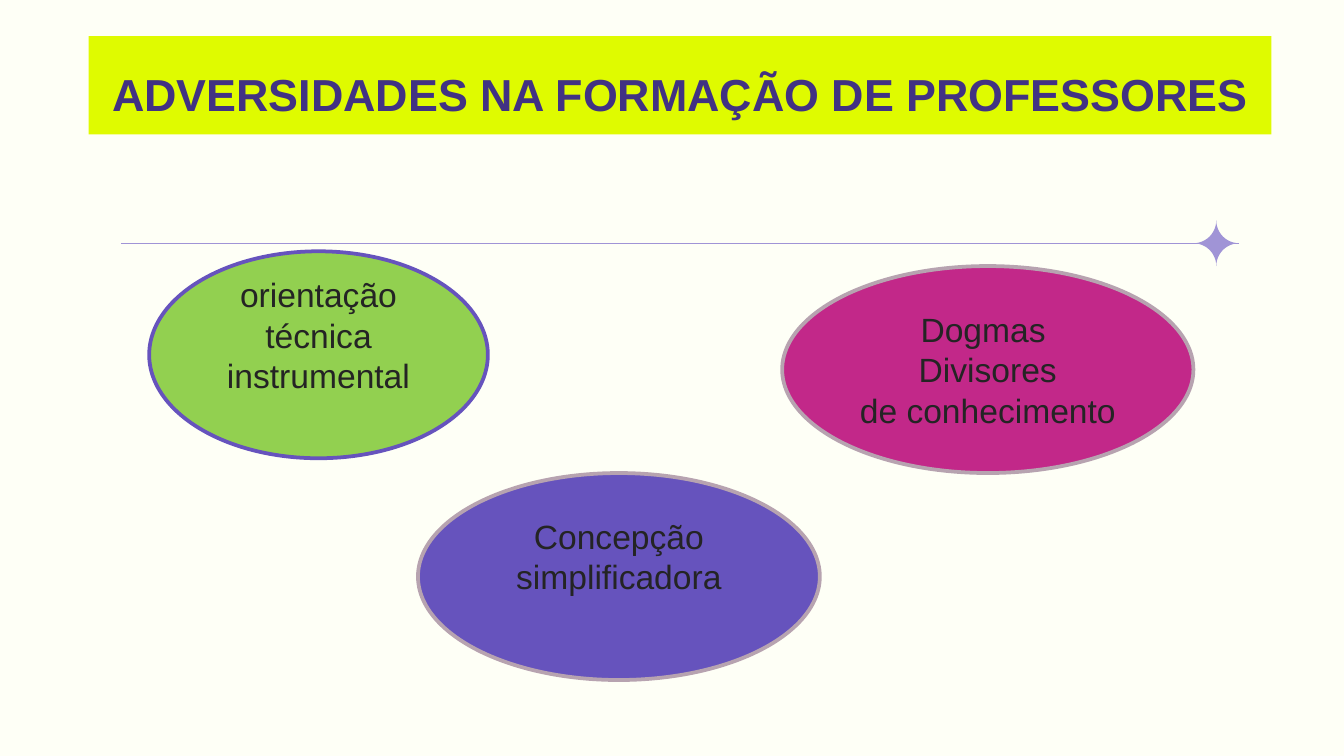
from dataclasses import dataclass

from lxml import etree
from pptx import Presentation
from pptx.dml.color import RGBColor
from pptx.enum import shapes, text
from pptx.oxml.ns import qn
from pptx.util import Inches, Pt

COLORS = {
    "background": "FEFFF6",
    "banner": "DFFB00",
    "title": "413283",
    "lilac": "A094D6",
    "green": "92D050",
    "purple": "6653BD",
    "magenta": "C22889",
    "mauve": "B7A3B0",
    "ink": "242424",
}
FONT = "Arial"
OVAL_HEIGHT = 1.54
RULE_Y = 1.81
RULE_LEFT, RULE_RIGHT = 0.9, 9.22
STAR_SIZE = 0.34


@dataclass
class Oval:
    """An adversity shown in an ellipse."""

    left: float
    top: float
    width: float
    fill: str
    outline: str
    lines: tuple[str, ...]
    bottom_inset: float = 0.05


OVALS = (
    Oval(1.11, 1.87, 2.52, "green", "purple", ("orientação técnica instrumental",), 0.35),
    Oval(3.11, 3.52, 2.99, "purple", "mauve", ("Concepção simplificadora",), 0.35),
    Oval(5.82, 1.98, 3.06, "magenta", "mauve", ("Dogmas ", "Divisores", "de conhecimento")),
)


def color(name: str) -> RGBColor:
    """Return the named palette colour."""
    return RGBColor.from_string(COLORS[name])


def add_filled(slide, kind, left: float, top: float, width: float, height: float, fill: str):
    """Add a flat preset shape without outline or shadow."""
    shape = slide.shapes.add_shape(kind, Inches(left), Inches(top), Inches(width), Inches(height))
    shape.shadow.inherit = False
    shape.fill.solid()
    shape.fill.fore_color.rgb = color(fill)
    shape.line.fill.background()
    return shape


def write(shape, lines: tuple[str, ...], size: int, ink: str, bold: bool = False) -> None:
    """Write centred paragraphs into a shape."""
    frame = shape.text_frame
    frame.word_wrap = True
    frame.vertical_anchor = text.MSO_ANCHOR.MIDDLE
    frame.text = "\n".join(lines)
    for paragraph in frame.paragraphs:
        paragraph.alignment = text.PP_ALIGN.CENTER
        for run in paragraph.runs:
            run.font.name = FONT
            run.font.size = Pt(size)
            run.font.bold = bold
            run.font.color.rgb = color(ink)


def add_banner(slide) -> None:
    """Add the title banner."""
    banner = add_filled(slide, shapes.MSO_SHAPE.RECTANGLE, 0.66, 0.27, 8.8, 0.73, "banner")
    write(banner, ("ADVERSIDADES NA FORMAÇÃO DE PROFESSORES",), 24, "title", True)
    banner.text_frame.margin_top = Inches(0.22)
    banner.text_frame.margin_bottom = Inches(0.1)


def add_rule(slide) -> None:
    """Add the horizontal rule with the star at its right end."""
    rule = slide.shapes.add_connector(
        shapes.MSO_CONNECTOR.STRAIGHT,
        Inches(RULE_LEFT), Inches(RULE_Y), Inches(RULE_RIGHT), Inches(RULE_Y),
    )
    rule.line.color.rgb = color("lilac")
    rule.line.width = Pt(0.75)
    etree.SubElement(rule._element.spPr, qn("a:effectLst"))
    star = add_filled(
        slide, shapes.MSO_SHAPE.PLAQUE,
        RULE_RIGHT - STAR_SIZE, RULE_Y - STAR_SIZE / 2, STAR_SIZE, STAR_SIZE, "lilac",
    )
    star.adjustments[0] = 0.5


def add_oval(slide, oval: Oval) -> None:
    """Add one outlined ellipse with its text."""
    shape = add_filled(
        slide, shapes.MSO_SHAPE.OVAL, oval.left, oval.top, oval.width, OVAL_HEIGHT, oval.fill
    )
    shape.line.color.rgb = color(oval.outline)
    shape.line.width = Pt(2)
    write(shape, oval.lines, 18, "ink")
    shape.text_frame.margin_bottom = Inches(oval.bottom_inset)


def main() -> None:
    """Build and save the slide."""
    presentation = Presentation()
    presentation.slide_width = Inches(10)
    presentation.slide_height = Inches(10 * 9 / 16)
    slide = presentation.slides.add_slide(presentation.slide_layouts[6])
    slide.background.fill.solid()
    slide.background.fill.fore_color.rgb = color("background")
    add_banner(slide)
    add_rule(slide)
    for oval in OVALS:
        add_oval(slide, oval)
    presentation.save("out.pptx")


if __name__ == "__main__":
    main()
